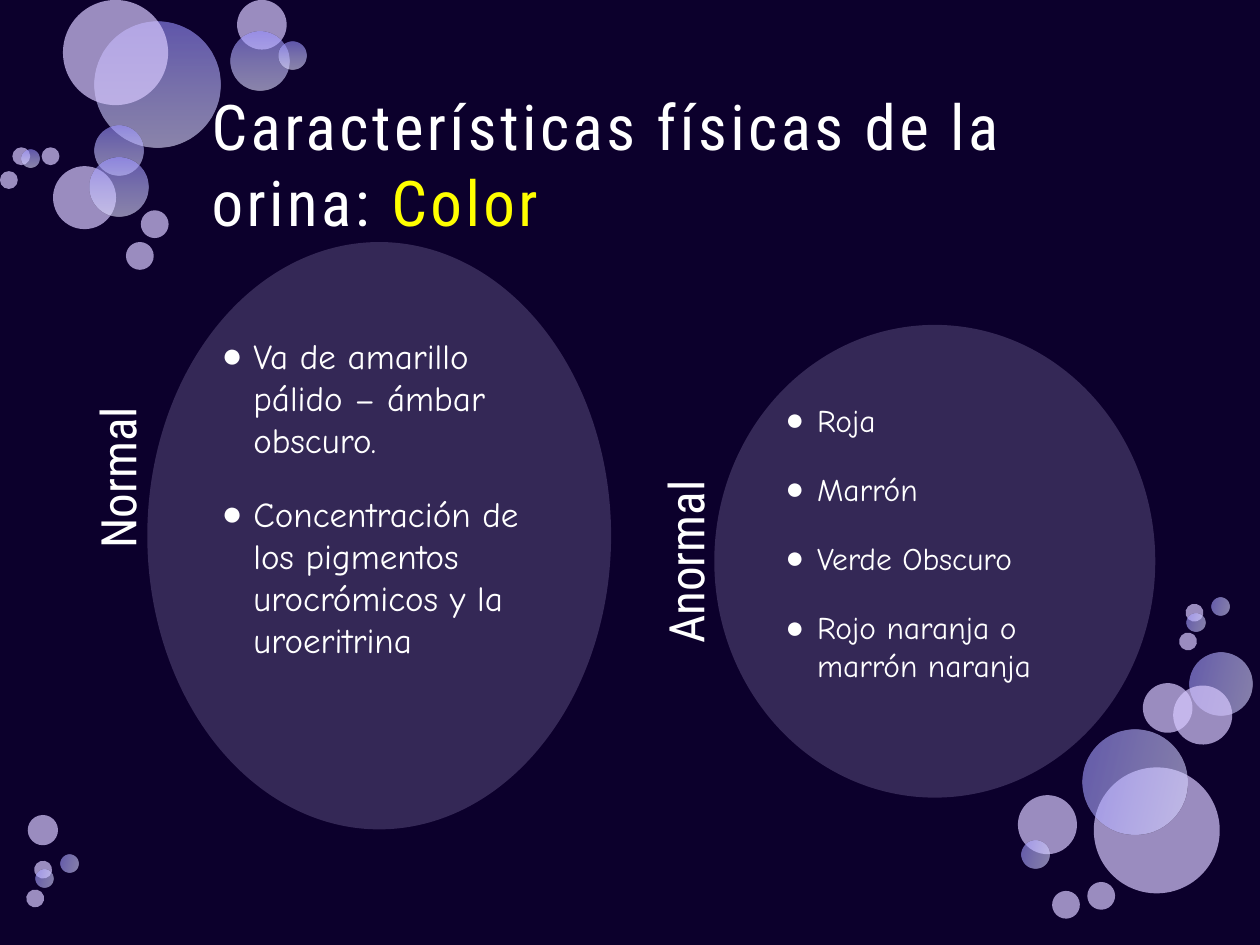
from lxml.etree import SubElement
from pptx import Presentation
from pptx.dml.color import RGBColor
from pptx.enum.shapes import MSO_SHAPE
from pptx.enum.text import MSO_ANCHOR as Anchor, MSO_AUTO_SIZE as AutoSize, PP_ALIGN as Align
from pptx.oxml.ns import qn
from pptx.util import Cm, Pt

COLORS = {
    "background": "0C002C", "text": "FFFFFF", "accent": "FFFF00", "lilac": "D7C8FE",
    "violet": "9890FF", "lavender": "BFBBFF", "mist": "E0DEFF",
}
HEADING_FONT, BODY_FONT = "Roboto Condensed", "Comic Neue"


def add_color(parent, color, alpha):
    """Append a colour with an opacity in percent."""
    rgb = SubElement(parent, qn("a:srgbClr"), val=COLORS[color])
    SubElement(rgb, qn("a:alpha"), val=str(alpha * 1000))


class BubbleSlide:
    def __init__(self, slide):
        self.slide = slide
        fill = slide.background.fill
        fill.solid()
        fill.fore_color.rgb = RGBColor.from_string(COLORS["background"])

    def bubble(self, left, top, size, shaded, turned):
        shape = self.slide.shapes.add_shape(
            MSO_SHAPE.OVAL, Cm(left), Cm(top), Cm(size), Cm(size))
        shape.shadow.inherit = False
        shape.line.fill.background()
        properties = shape.element.spPr
        if turned:
            shape.rotation = 103.3
            properties.find(qn("a:xfrm")).set("flipV", "1")
        if shaded:
            gradient = SubElement(properties, qn("a:gradFill"), rotWithShape="1")
            stops = SubElement(gradient, qn("a:gsLst"))
            for position, color in ((0, "violet"), (50, "lavender"), (100, "mist")):
                stop = SubElement(stops, qn("a:gs"), pos=str(position * 1000))
                add_color(stop, color, 60)
            SubElement(gradient, qn("a:lin"), ang="5400000", scaled="0")
            properties.find(qn("a:prstGeom")).addnext(gradient)
        else:
            self.tint(shape, "lilac", 70)

    def tint(self, shape, color, alpha):
        shape.fill.solid()
        shape.fill.fore_color.rgb = RGBColor.from_string(COLORS[color])
        rgb = shape.element.spPr.find(qn("a:solidFill")).find(qn("a:srgbClr"))
        SubElement(rgb, qn("a:alpha"), val=str(alpha * 1000))

    def place(self, index, box, anchor, inset=None):
        """Move a placeholder to its box, in front of the bubbles."""
        holder = self.slide.placeholders[index]
        holder.left, holder.top, holder.width, holder.height = map(Cm, box)
        holder.element.getparent().append(holder.element)
        frame = holder.text_frame
        frame.word_wrap = True
        frame.auto_size = AutoSize.NONE
        frame.vertical_anchor = anchor
        if inset is not None:
            frame.margin_left = frame.margin_right = Cm(inset)
            frame.margin_top = frame.margin_bottom = Cm(inset)
        return holder

    def style(self, run, font, size, color="text"):
        run.font.name = font
        run.font.size = Pt(size)
        run.font.bold = False
        run.font.color.rgb = RGBColor.from_string(COLORS[color])

    def title(self, text, highlight, box):
        holder = self.place(0, box, Anchor.MIDDLE)
        paragraph = holder.text_frame.paragraphs[0]
        paragraph.alignment = Align.LEFT
        for words, color in ((text, "text"), (highlight, "accent")):
            run = paragraph.add_run()
            run.text = words
            self.style(run, HEADING_FONT, 36, color)
            run.font._element.set("spc", "200")

    def side_label(self, index, text, box):
        holder = self.place(index, box, Anchor.MIDDLE, 0.13)
        holder.rotation = 270
        holder.text_frame.text = text
        paragraph = holder.text_frame.paragraphs[0]
        paragraph.alignment = Align.CENTER
        paragraph.space_before = Pt(18)
        self.style(paragraph.runs[0], HEADING_FONT, 28)

    def oval_list(self, index, items, size, box):
        holder = self.place(index, box, Anchor.TOP, 0.13)
        geometry = SubElement(holder.element.spPr, qn("a:prstGeom"), prst="ellipse")
        SubElement(geometry, qn("a:avLst"))
        self.tint(holder, "lilac", 20)
        holder.text_frame.text = "\n".join(items)
        for paragraph in holder.text_frame.paragraphs:
            paragraph.alignment = Align.LEFT
            paragraph.space_before = Pt(18)
            properties = paragraph._p.get_or_add_pPr()
            properties.set("marL", str(Cm(0.64)))
            properties.set("indent", str(Cm(-0.64)))
            SubElement(properties, qn("a:buChar"), char="●")
            self.style(paragraph.runs[0], BODY_FONT, size)


# Bubbles as left, top, diameter in cm, and whether shaded
TOP_BUBBLES = [
    (1.9, 0.43, 2.54, True), (1.07, 3.35, 1.27, False), (1.9, 2.54, 1, True),
    (1.8, 3.18, 1.19, True), (1.27, 0, 2.12, False), (4.78, 0, 1, False),
    (4.65, 0.64, 1.19, True), (5.61, 0.84, 0.56, True), (2.84, 4.24, 0.56, False),
    (0.25, 2.97, 0.36, False), (2.54, 4.88, 0.56, False), (0, 3.45, 0.36, False),
    (0.43, 3.02, 0.36, True), (0.84, 2.97, 0.36, False),
]
BOTTOM_BUBBLES = [
    (22.05, 15.47, 2.54, False), (23.98, 13.16, 1.27, True), (23.04, 13.77, 1, False),
    (23.65, 13.82, 1.19, False), (21.82, 14.71, 2.12, True), (0.56, 16.43, 0.61, False),
    (20.52, 16.03, 1.19, False), (20.6, 16.94, 0.56, True), (21.21, 17.96, 0.56, False),
    (23.9, 12.17, 0.36, False), (21.92, 17.78, 0.56, False), (24.43, 12.04, 0.36, True),
    (23.93, 12.37, 0.36, True), (23.77, 12.75, 0.36, False), (0.69, 17.35, 0.36, False),
    (1.22, 17.22, 0.36, True), (0.71, 17.53, 0.36, True), (0.53, 17.93, 0.36, False),
]


def main():
    deck = Presentation()
    deck.slide_width, deck.slide_height = Cm(25.4), Cm(19.05)
    comparison = deck.slide_layouts.get_by_name("Comparison")
    page = BubbleSlide(deck.slides.add_slide(comparison))

    # Decoration
    for group, turned in ((TOP_BUBBLES, False), (BOTTOM_BUBBLES, True)):
        for left, top, size, shaded in group:
            page.bubble(left, top, size, shaded, turned)

    # Title
    page.title("Características físicas de la orina: ", "Color", (4.01, 1.7, 18.42, 3.18))

    # Normal colour
    page.side_label(1, "Normal", (-2.41, 8.74, 9.53, 1.78))
    page.oval_list(2, ["Va de amarillo pálido – ámbar obscuro.",
                       "Concentración de los pigmentos urocrómicos y la uroeritrina"],
                   20, (2.97, 4.88, 9.35, 11.84))

    # Abnormal colour
    page.side_label(3, "Anormal", (9.04, 10.44, 9.53, 1.78))
    page.oval_list(4, ["Roja", "Marrón", "Verde Obscuro", "Rojo naranja o marrón naranja"],
                   18, (14.4, 6.55, 8.89, 9.53))

    deck.save("out.pptx")


if __name__ == "__main__":
    main()
